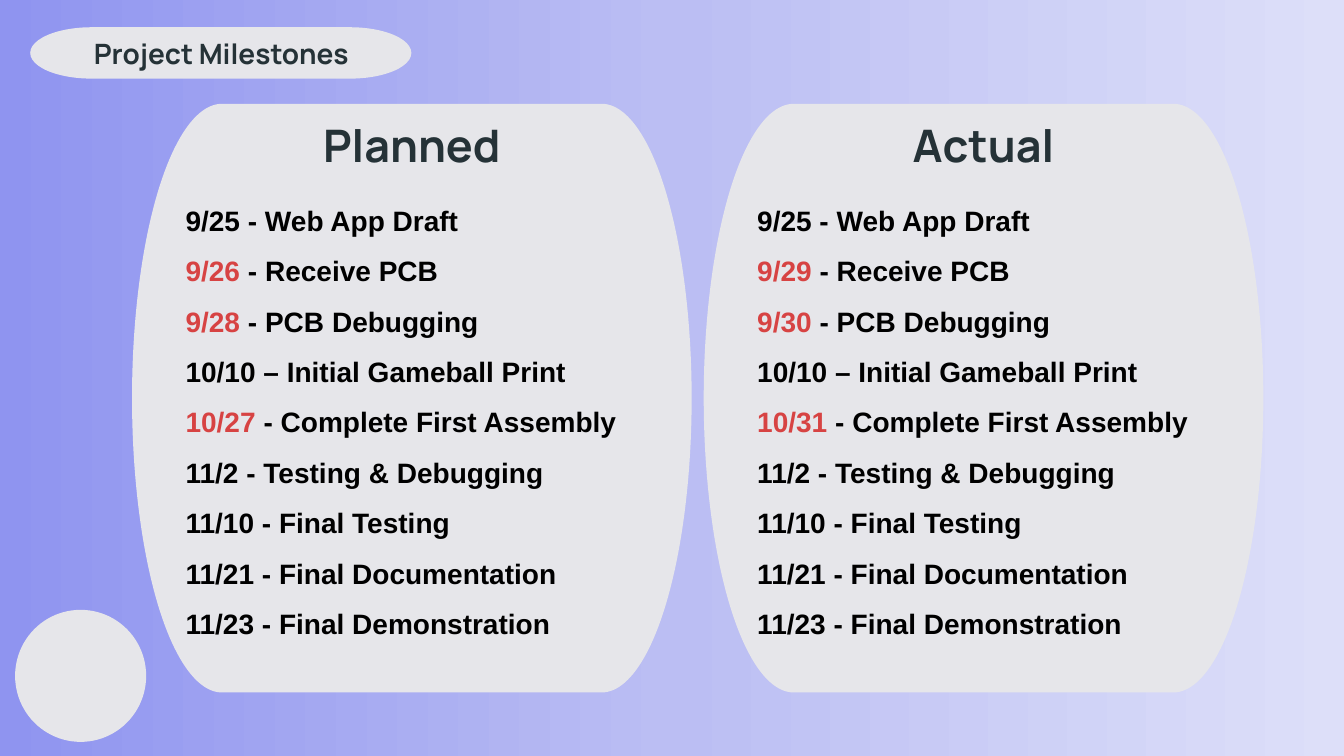
from copy import deepcopy

from pptx import Presentation
from pptx.dml.color import RGBColor
from pptx.enum.shapes import MSO_SHAPE
from pptx.enum.text import MSO_ANCHOR, MSO_AUTO_SIZE, PP_ALIGN
from pptx.oxml.ns import qn
from pptx.util import Inches, Pt

TERMINATOR, OVAL = MSO_SHAPE.FLOWCHART_TERMINATOR, MSO_SHAPE.OVAL
TOP, NO_FIT = MSO_ANCHOR.TOP, MSO_AUTO_SIZE.NONE
LEFT, CENTER = PP_ALIGN.LEFT, PP_ALIGN.CENTER

PANEL = RGBColor(0xE6, 0xE6, 0xEA)
HEADING = RGBColor(0x25, 0x32, 0x37)
BLACK = RGBColor(0x00, 0x00, 0x00)
RED = RGBColor(0xD7, 0x43, 0x43)
GRADIENT = [
    (0, RGBColor(0x8F, 0x94, 0xF0)),
    (0.5, RGBColor(0xBB, 0xBE, 0xF3)),
    (1, RGBColor(0xDD, 0xDF, 0xF9)),
]

# Each milestone: separator, name, planned date, actual date
MILESTONES = [
    ("-", "Web App Draft", "9/25", "9/25"),
    ("-", "Receive PCB", "9/26", "9/29"),
    ("-", "PCB Debugging", "9/28", "9/30"),
    ("–", "Initial Gameball Print", "10/10", "10/10"),
    ("-", "Complete First Assembly", "10/27", "10/31"),
    ("-", "Testing & Debugging", "11/2", "11/2"),
    ("-", "Final Testing", "11/10", "11/10"),
    ("-", "Final Documentation", "11/21", "11/21"),
    ("-", "Final Demonstration", "11/23", "11/23"),
]
COLUMN_STEP = 5.67


class MilestoneSlide:
    def __init__(self, prs):
        self.slide = prs.slides.add_slide(prs.slide_layouts.get_by_name("Comparison"))
        self.heading_font = "Manrope"
        self.list_font = "Arial"

    def background(self, stops):
        fill = self.slide.background.fill
        fill.gradient()
        fill.gradient_angle = 0
        # The default gradient has two stops, so add the missing ones
        gs_list = self.slide.element.find(".//" + qn("a:gsLst"))
        while len(gs_list) < len(stops):
            gs_list.append(deepcopy(gs_list[0]))
        for stop, (position, color) in zip(fill.gradient_stops, stops):
            stop.position = position
            stop.color.rgb = color

    def panel(self, kind, x, y, w, h):
        sp = self.slide.shapes.add_shape(kind, Inches(x), Inches(y), Inches(w), Inches(h))
        sp.shadow.inherit = False
        sp.fill.solid()
        sp.fill.fore_color.rgb = PANEL
        sp.line.fill.background()

    def place(self, idx, x, y, w, h):
        sp = self.slide.placeholders[idx]
        sp.left, sp.top, sp.width, sp.height = Inches(x), Inches(y), Inches(w), Inches(h)
        # Bring the placeholder in front of its panel
        self.slide.shapes.element.append(sp.element)
        tf = sp.text_frame
        tf.word_wrap = True
        tf.auto_size = NO_FIT
        tf.vertical_anchor = TOP
        return tf

    def style(self, p, font, size, color, align):
        p.alignment = align
        p.space_before = p.space_after = Pt(0)
        p.font.name, p.font.size, p.font.bold = font, Pt(size), True
        p.font.color.rgb = color

    def heading(self, idx, text, x, y, w, h, size):
        p = self.place(idx, x, y, w, h).paragraphs[0]
        p.text = text
        self.style(p, self.heading_font, size, HEADING, CENTER)

    def milestones(self, idx, items, x, y, w, h):
        tf = self.place(idx, x, y, w, h)
        for i, (date, rest, changed) in enumerate(items):
            p = tf.add_paragraph() if i else tf.paragraphs[0]
            self.style(p, self.list_font, 20, BLACK, LEFT)
            p.line_spacing = 1.5
            # Plain paragraphs without bullet or hanging indent
            pPr = p._p.get_or_add_pPr()
            pPr.set("marL", "0")
            pPr.set("indent", "0")
            bullet = pPr.makeelement(qn("a:buNone"), {})
            pPr.find(qn("a:defRPr")).addprevious(bullet)
            r = p.add_run()
            r.text = date
            if changed:
                r.font.color.rgb = RED
            p.add_run().text = rest


def main():
    prs = Presentation()
    prs.slide_width, prs.slide_height = Inches(13.33), Inches(7.5)
    s = MilestoneSlide(prs)
    s.background(GRADIENT)

    # Title and corner circle
    s.panel(TERMINATOR, 0.3, 0.27, 3.78, 0.51)
    s.panel(OVAL, 0.15, 6.05, 1.3, 1.31)
    s.heading(0, "Project Milestones", 0.67, 0.31, 3.05, 0.44, 20)

    # Planned and actual columns
    for column, name in enumerate(("Planned", "Actual")):
        dx = column * COLUMN_STEP
        items = [
            (dates[column], f" {dash} {task}", dates[0] != dates[1])
            for dash, task, *dates in MILESTONES
        ]
        s.panel(TERMINATOR, 1.31 + dx, 1.03, 5.55, 5.84)
        s.heading(1 + 2 * column, name, 2.37 + dx, 1.12, 3.43, 0.64, 32)
        s.milestones(2 + 2 * column, items, 1.74 + dx, 1.8, 4.69, 4.58)

    prs.save("out.pptx")


if __name__ == "__main__":
    main()
